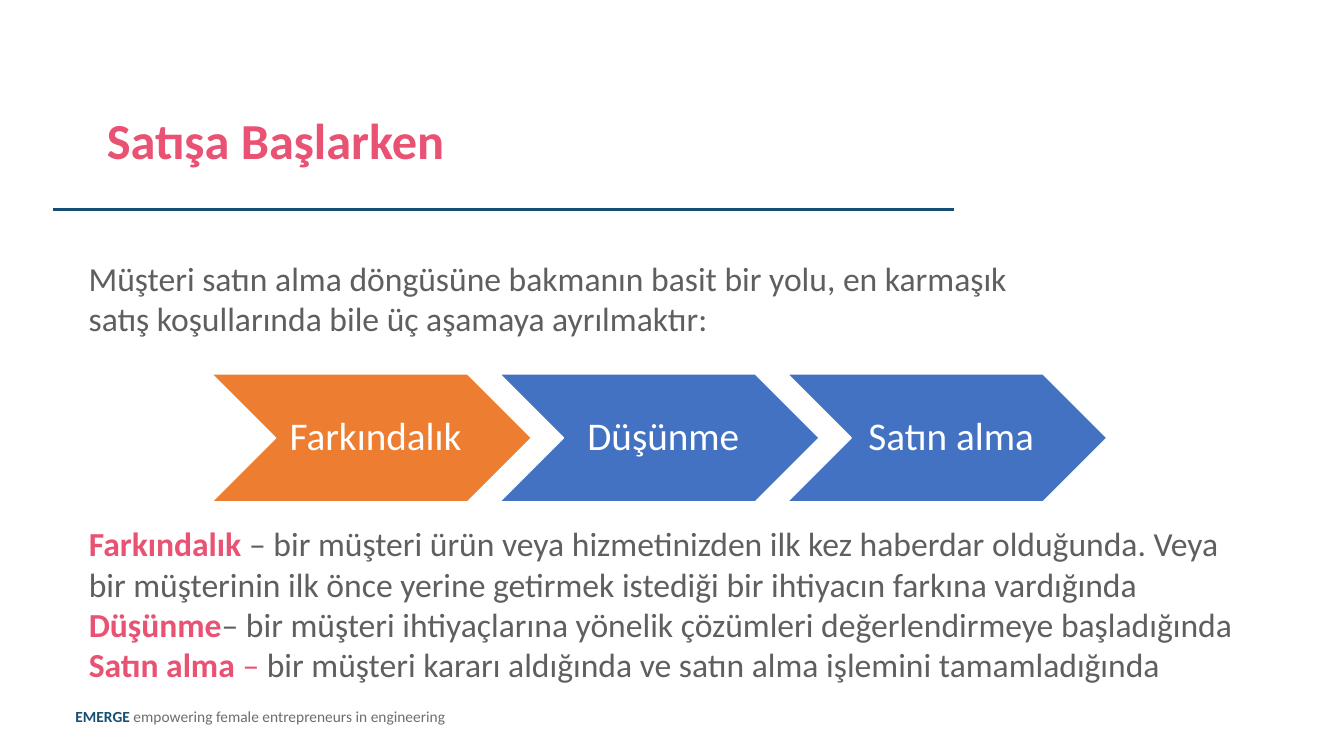
from dataclasses import dataclass

import pptx
import pptx.dml.color
import pptx.enum.shapes
import pptx.enum.text
import pptx.oxml.ns
import pptx.util
from lxml import etree

Pt = pptx.util.Pt
Anchor = pptx.enum.text.MSO_ANCHOR
Align = pptx.enum.text.PP_ALIGN


@dataclass(frozen=True)
class Theme:
    font: str = "Calibri"
    pink: str = "E95273"
    navy: str = "174F72"
    grey: str = "615F5D"
    footer_grey: str = "6D6E6C"
    orange: str = "ED7D31"
    blue: str = "4372C3"
    white: str = "FFFFFF"
    title_size: int = 36
    stage_size: int = 28
    body_size: int = 24
    footer_size: int = 11


theme = Theme()


def rgb(value):
    return pptx.dml.color.RGBColor.from_string(value)


def write(frame, paragraphs, size, frame_format={}, paragraph_format={}):
    """Fill a text frame with paragraphs of (text, colour, bold) runs."""
    frame_values = {
        "word_wrap": True,
        "auto_size": pptx.enum.text.MSO_AUTO_SIZE.NONE,
        "vertical_anchor": Anchor.TOP,
        "margin_left": Pt(7.2),
        "margin_right": Pt(7.2),
        "margin_top": Pt(3.6),
        "margin_bottom": Pt(3.6),
        **frame_format,
    }
    for name, value in frame_values.items():
        setattr(frame, name, value)
    paragraph_values = {
        "alignment": Align.LEFT,
        "line_spacing": 1.0,
        "space_before": Pt(0),
        "space_after": Pt(0),
        **paragraph_format,
    }
    for index, runs in enumerate(paragraphs):
        paragraph = frame.add_paragraph() if index else frame.paragraphs[0]
        for name, value in paragraph_values.items():
            setattr(paragraph, name, value)
        for text, colour, bold in runs:
            run = paragraph.add_run()
            run.text = text
            run.font.color.rgb = rgb(colour)
            font_values = {"name": theme.font, "size": Pt(size), "bold": bold}
            for name, value in font_values.items():
                setattr(run.font, name, value)


presentation = pptx.Presentation()
presentation.slide_width = Pt(960)
presentation.slide_height = Pt(540)
slide = presentation.slides.add_slide(presentation.slide_layouts[1])
title = slide.shapes.title
definitions = slide.placeholders[1]

# Rule and footer
rule = slide.shapes.add_connector(
    pptx.enum.shapes.MSO_CONNECTOR.STRAIGHT, Pt(681.8), Pt(149.8), Pt(37.8), Pt(149.8)
)
rule.line.color.rgb = rgb(theme.navy)
rule.line.width = Pt(2.25)
etree.SubElement(rule._element.spPr, pptx.oxml.ns.qn("a:effectLst"))

footer = slide.shapes.add_textbox(Pt(46.8), Pt(501.8), Pt(890), Pt(32.4))
footer_runs = [
    ("EMERGE ", theme.navy, True),
    ("empowering female entrepreneurs in engineering", theme.footer_grey, False),
]
write(footer.text_frame, [footer_runs], theme.footer_size)

# Title and introduction
title.left, title.top, title.width, title.height = Pt(69.1), Pt(79.2), Pt(583.2), Pt(54.7)
write(
    title.text_frame,
    [[("Satışa Başlarken", theme.pink, True)]],
    theme.title_size,
    paragraph_format={"line_spacing": 0.9},
)

introduction = slide.shapes.add_textbox(Pt(56.2), Pt(180.7), Pt(685.4), Pt(65.5))
introduction_text = (
    "Müşteri satın alma döngüsüne bakmanın basit bir yolu, "
    "en karmaşık satış koşullarında bile üç aşamaya ayrılmaktır:"
)
write(introduction.text_frame, [[(introduction_text, theme.grey, False)]], theme.body_size)

# Stages of the buying cycle
stages = [
    ("Farkındalık", theme.orange),
    ("Düşünme", theme.blue),
    ("Satın alma", theme.blue),
]
stage_left, stage_pitch = 151.2, 205.56
for index, (stage, colour) in enumerate(stages):
    chevron = slide.shapes.add_shape(
        pptx.enum.shapes.MSO_SHAPE.CHEVRON,
        Pt(stage_left + index * stage_pitch), Pt(267.1), Pt(228.4), Pt(91.4),
    )
    chevron.shadow.inherit = False
    chevron.fill.solid()
    chevron.fill.fore_color.rgb = rgb(colour)
    chevron.line.color.rgb = rgb(theme.white)
    chevron.line.width = Pt(1)
    write(
        chevron.text_frame,
        [[(stage, theme.white, False)]],
        theme.stage_size,
        {
            "vertical_anchor": Anchor.MIDDLE,
            "margin_left": Pt(8.6),
            "margin_right": Pt(2.9),
            "margin_top": Pt(2.9),
            "margin_bottom": Pt(2.9),
        },
        {"alignment": Align.CENTER, "line_spacing": 0.9},
    )

# Definitions of the stages
definitions.left, definitions.top = Pt(56.2), Pt(370.1)
definitions.width, definitions.height = Pt(847.4), Pt(123.8)
definition_paragraphs = [
    [
        ("Farkındalık", theme.pink, True),
        (
            " – bir müşteri ürün veya hizmetinizden ilk kez haberdar olduğunda. Veya "
            "bir müşterinin ilk önce yerine getirmek istediği bir ihtiyacın farkına vardığında",
            theme.grey, False,
        ),
    ],
    [
        ("Düşünme", theme.pink, True),
        (
            "– bir müşteri ihtiyaçlarına yönelik çözümleri değerlendirmeye başladığında",
            theme.grey, False,
        ),
    ],
    [
        ("Satın alma", theme.pink, True),
        (" – ", theme.pink, False),
        ("bir müşteri kararı aldığında ve satın alma işlemini tamamladığında", theme.grey, False),
    ],
]
write(definitions.text_frame, definition_paragraphs, theme.body_size)
for paragraph in definitions.text_frame.paragraphs:
    properties = paragraph._p.get_or_add_pPr()
    properties.set("marL", "0")
    properties.set("indent", "0")
    etree.SubElement(properties, pptx.oxml.ns.qn("a:buNone"))

presentation.save("out.pptx")
